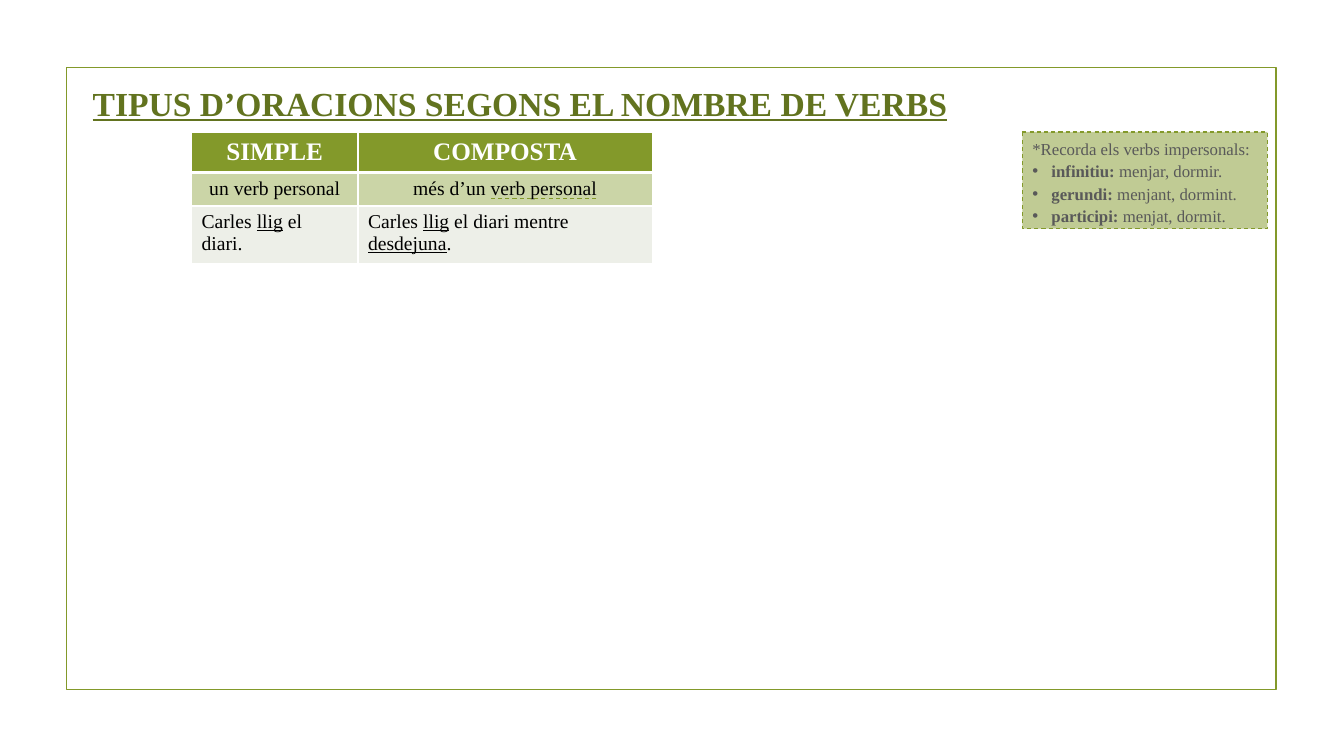
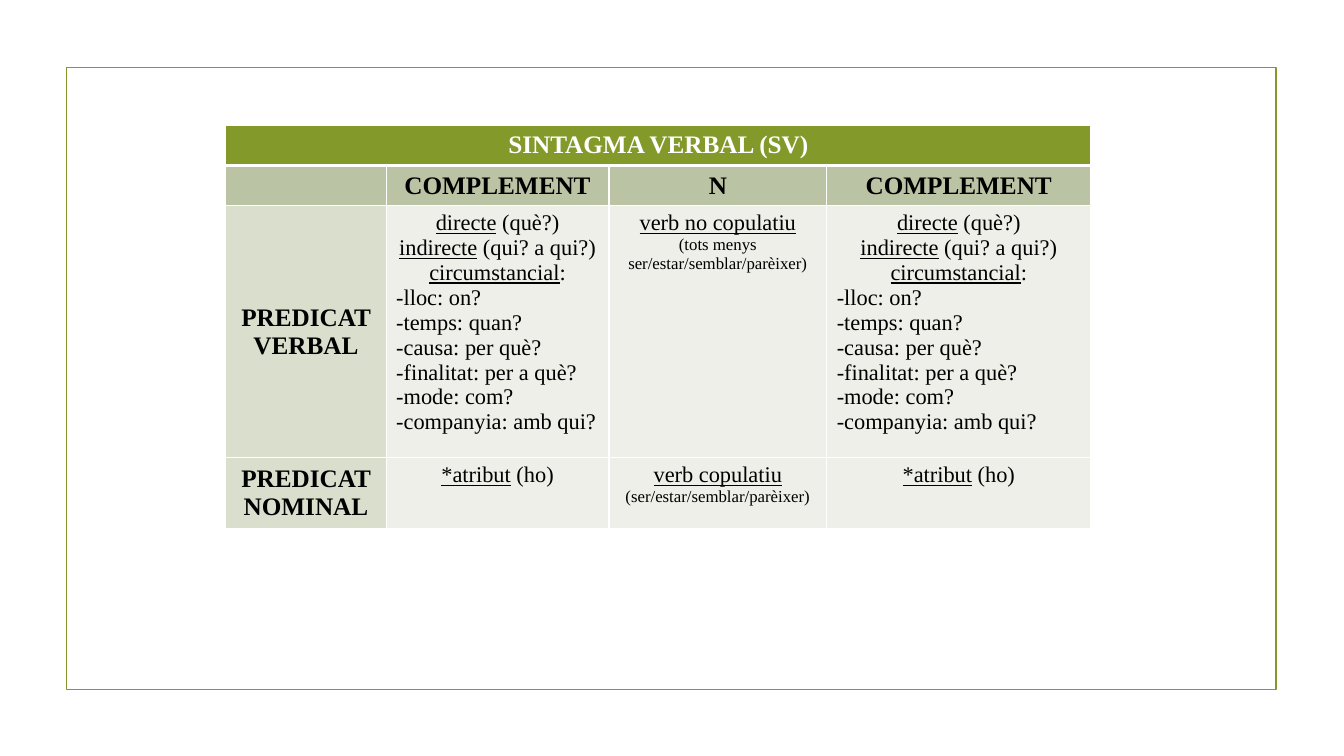
"""Builds two slides on Catalan sentence types and the verb phrase."""
from lxml.etree import SubElement
from pptx import Presentation
from pptx.dml.color import RGBColor
from pptx.enum.dml import MSO_LINE
from pptx.enum.shapes import MSO_SHAPE
from pptx.enum.text import MSO_ANCHOR, PP_ALIGN
from pptx.oxml import parse_xml
from pptx.oxml.ns import nsdecls, qn
from pptx.util import Emu, Pt

PX = 9144
FONT = "Times New Roman"
COLORS = {
    "green": "83992A", "title": "62731F", "white": "FFFFFF", "black": "000000",
    "gray": "595959", "sage": "BBC3A5", "mist": "D9DECD", "pale": "EDEFE8",
}
FRAME = (66, 67, 1200, 617)
LEFT, CENTER = PP_ALIGN.LEFT, PP_ALIGN.CENTER
TOP, MIDDLE = MSO_ANCHOR.TOP, MSO_ANCHOR.MIDDLE
STYLES = {
    "head": dict(size=18, bold=True, color="white", align=CENTER, anchor=MIDDLE, fill="green"),
    "subhead": dict(size=18, bold=True, color="black", align=CENTER, anchor=MIDDLE, fill="sage"),
    "side": dict(size=18, bold=True, color="black", align=CENTER, anchor=MIDDLE, fill="mist"),
    "rule": dict(size=14, bold=False, color="black", align=CENTER, anchor=MIDDLE, fill="green", alpha=41),
    "example": dict(size=14, bold=False, color="black", align=LEFT, anchor=TOP, fill="pale"),
    "body": dict(size=16, bold=False, color="black", align=CENTER, anchor=TOP, fill="pale"),
}
SMALL = 12

TITLE = "TIPUS D’ORACIONS SEGONS EL NOMBRE DE VERBS"
TITLE_BOX = (82, 77, 885, 50)
REMINDER = [
    "*Recorda els verbs impersonals:",
    "_infinitiu:_ menjar, dormir.",
    "_gerundi:_ menjant, dormint.",
    "_participi:_ menjat, dormit.",
]
REMINDER_BOX = (1014, 131, 243, 96)
POINTER = (0.69, -1.74, 0.69, -2.17)
COMPLEMENTS = [
    "_directe_ (què?)", "_indirecte_ (qui? a qui?)", "_circumstancial_:",
    "-lloc: on?", "-temps: quan?", "-causa: per què?",
    "-finalitat: per a què?", "-mode: com?", "-companyia: amb qui?",
]
ATTRIBUTE = ["_*atribut_ (ho)"]

SENTENCES = {
    "at": (190, 131), "cols": [165, 292], "rows": [39, 33, 57],
    "cells": [
        [("head", ["SIMPLE"]), ("head", ["COMPOSTA"])],
        [("rule", ["un verb personal"]), ("rule", ["més d’un verb personal"])],
        [("example", ["Carles _llig_ el diari."]),
         ("example", ["Carles _llig_ el diari mentre _desdejuna_."])],
    ],
}
VERB_PHRASE = {
    "at": (224, 124), "cols": [159, 221, 216, 262], "rows": [40, 40, 250, 69],
    "cells": [
        [("head", ["SINTAGMA VERBAL (SV)"])] + [("head", [])] * 3,
        [("subhead", []), ("subhead", ["COMPLEMENT"]), ("subhead", ["N"]), ("subhead", ["COMPLEMENT"])],
        [("side", ["PREDICAT VERBAL"]), ("body", COMPLEMENTS),
         ("body", ["_verb no copulatiu_", "(tots menys ser/estar/semblar/parèixer)"]),
         ("body", COMPLEMENTS)],
        [("side", ["PREDICAT NOMINAL"]), ("body", ATTRIBUTE),
         ("body", ["_verb copulatiu_", "(ser/estar/semblar/parèixer)"]),
         ("body", ATTRIBUTE)],
    ],
}


def box(at):
    return [Emu(v * PX) for v in at]


def rgb(name):
    return RGBColor.from_string(COLORS[name])


def paint(fill, color, alpha=100):
    fill.solid()
    fill.fore_color.rgb = rgb(color)
    if alpha < 100:
        node = fill._xPr.find(qn("a:solidFill"))[0]
        SubElement(node, qn("a:alpha"), val=str(alpha * 1000))


def add_runs(p, text, size, color, bold=False, mark="underline"):
    for i, part in enumerate(text.split("_")):
        if part:
            r = p.add_run()
            r.text = part
            r.font.name, r.font.size, r.font.bold = FONT, Pt(size), bold
            r.font.color.rgb = rgb(color)
            if i % 2:
                setattr(r.font, mark, True)


def paragraphs(tf, texts):
    for i, text in enumerate(texts):
        yield (tf.add_paragraph() if i else tf.paragraphs[0]), text


def add_borders(cell, row):
    widths = {"L": 1, "R": 1, "T": 3 if row == 1 else 1, "B": 1 if row else 3}
    tcPr = cell._tc.get_or_add_tcPr()
    for i, (side, width) in enumerate(widths.items()):
        tcPr.insert(i, parse_xml(
            f'<a:ln{side} {nsdecls("a")} w="{Pt(width)}"><a:solidFill>'
            f'<a:srgbClr val="{COLORS["white"]}"/></a:solidFill></a:ln{side}>'))


def fill_cell(cell, row, style, texts):
    st = STYLES[style]
    paint(cell.fill, st["fill"], st.get("alpha", 100))
    add_borders(cell, row)
    cell.vertical_anchor = st["anchor"]
    for p, text in paragraphs(cell.text_frame, texts):
        p.alignment = LEFT if text.startswith("-") else st["align"]
        size = SMALL if text.startswith("(") else st["size"]
        add_runs(p, text, size, st["color"], st["bold"])


def add_grid(s, spec):
    cols, rows = spec["cols"], spec["rows"]
    at = box((*spec["at"], sum(cols), sum(rows)))
    tbl = s.shapes.add_table(len(rows), len(cols), *at).table
    tbl.first_row = tbl.horz_banding = False
    for col, width in zip(tbl.columns, cols):
        col.width = Emu(width * PX)
    for i, (row, height) in enumerate(zip(tbl.rows, rows)):
        row.height = Emu(height * PX)
        for cell, (style, texts) in zip(row.cells, spec["cells"][i]):
            fill_cell(cell, i, style, texts)
    return tbl


def add_slide(prs):
    s = prs.slides.add_slide(prs.slide_layouts[6])
    sp = s.shapes.add_shape(MSO_SHAPE.RECTANGLE, *box(FRAME))
    sp.shadow.inherit = False
    sp.fill.background()
    sp.line.color.rgb = rgb("green")
    sp.line.width = Pt(1.25)
    return s


def add_title(s):
    tf = s.shapes.add_textbox(*box(TITLE_BOX)).text_frame
    tf.word_wrap = False
    add_runs(tf.paragraphs[0], f"_{TITLE}_", 24, "title", True)


def add_reminder(s):
    sp = s.shapes.add_shape(MSO_SHAPE.LINE_CALLOUT_1, *box(REMINDER_BOX))
    sp.shadow.inherit = False
    for i, value in enumerate(POINTER):
        sp.adjustments[i] = value
    paint(sp.fill, "green", 50)
    sp.line.color.rgb = rgb("green")
    sp.line.width = Pt(0.75)
    sp.line.dash_style = MSO_LINE.DASH
    tf = sp.text_frame
    tf.word_wrap = True
    tf.vertical_anchor = TOP
    for p, text in paragraphs(tf, REMINDER):
        p.alignment = LEFT
        p.line_spacing = 1.1
        if text.startswith("_"):
            pPr = p._p.get_or_add_pPr()
            pPr.set("marL", str(19 * PX))
            pPr.set("indent", str(-19 * PX))
            SubElement(pPr, qn("a:buFont"), typeface="Arial")
            SubElement(pPr, qn("a:buChar"), char="•")
        add_runs(p, text, SMALL, "gray", mark="bold")


def main():
    prs = Presentation()
    prs.slide_width, prs.slide_height = box((1333, 750))
    s = add_slide(prs)
    add_title(s)
    add_grid(s, SENTENCES)
    add_reminder(s)
    tbl = add_grid(add_slide(prs), VERB_PHRASE)
    tbl.cell(0, 0).merge(tbl.cell(0, 3))
    prs.save("out.pptx")


if __name__ == "__main__":
    main()
